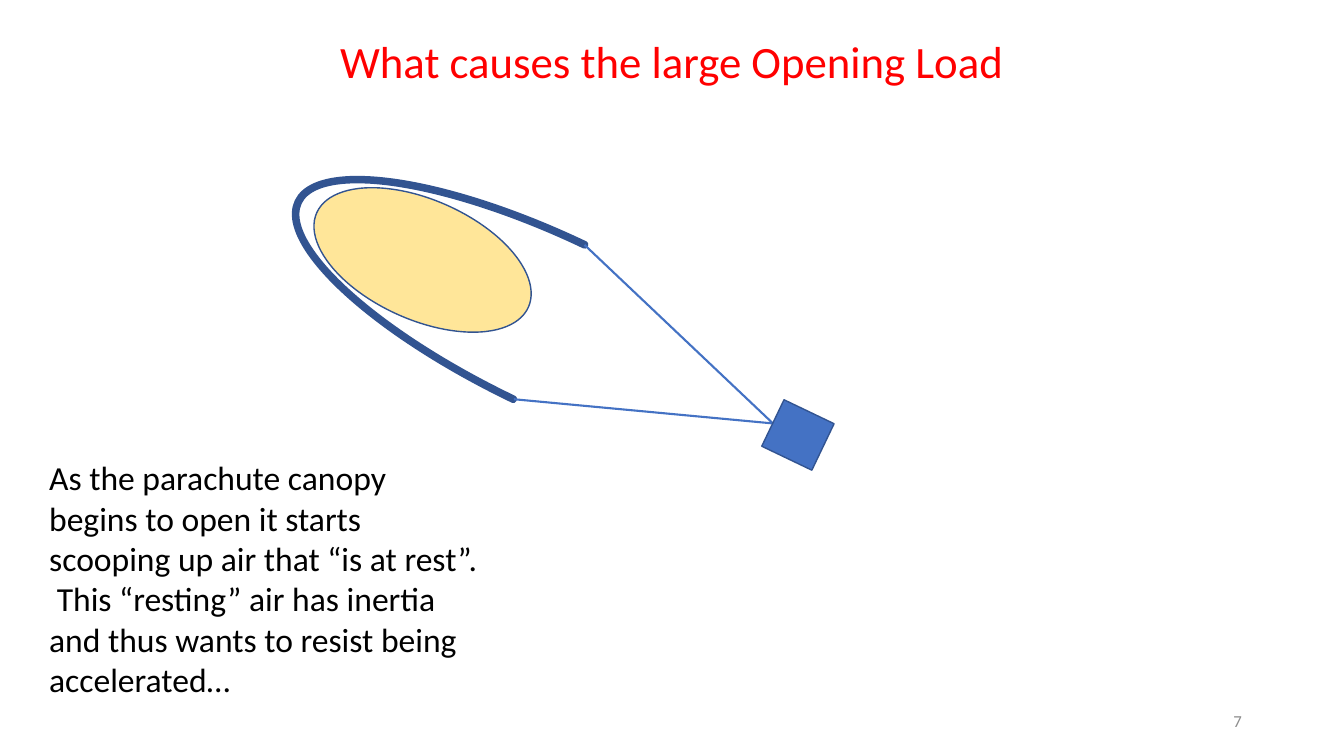
"""Build the slide on what causes a parachute's large opening load."""
from lxml import etree
from pptx import Presentation
from pptx.dml.color import RGBColor
from pptx.enum import shapes, text
from pptx.oxml import ns
from pptx.util import Cm, Pt

COLORS = {
    "blue": "4472C4",
    "outline": "325491",
    "air": "FFE699",
    "title": "FF0000",
    "body": "000000",
    "number": "8C8C8C",
}


def add_part(parent, kind, place, rotation, fill, line_width):
    """Add a rotated, outlined preset shape."""
    part = parent.add_shape(kind, *[Cm(length) for length in place])
    part.shadow.inherit = False
    part.rotation = rotation
    part.fill.solid()
    part.fill.fore_color.rgb = RGBColor.from_string(COLORS[fill])
    part.line.color.rgb = RGBColor.from_string(COLORS["outline"])
    part.line.width = Pt(line_width)
    return part


def write_text(box, place, words, size, color, align, anchor):
    """Place a box and write one formatted run in it."""
    box.left, box.top, box.width, box.height = [Cm(length) for length in place]
    frame = box.text_frame
    frame.word_wrap = True
    frame.auto_size = text.MSO_AUTO_SIZE.NONE
    frame.vertical_anchor = anchor
    para = frame.paragraphs[0]
    para.alignment = align
    span = para.add_run()
    span.text = words
    span.font.name = "Calibri"
    span.font.size = Pt(size)
    span.font.color.rgb = RGBColor.from_string(COLORS[color])


deck = Presentation()
deck.slide_width, deck.slide_height = Cm(33.87), Cm(19.05)
page = deck.slides.add_slide(deck.slide_layouts.get_by_name("Title Only"))

write_text(page.shapes.title, (8.03, 0.71, 17.81, 1.63),
           "What causes the large Opening Load", 32, "title",
           text.PP_ALIGN.CENTER, text.MSO_ANCHOR.TOP)

parachute = page.shapes.add_group_shape().shapes
canopy = add_part(parachute, shapes.MSO_SHAPE.BLOCK_ARC,
                  (11.71, 1.07, 4.32, 14.12), 295.6, "blue", 4.5)
for index, value in enumerate((108, 215.044, 0.008)):
    canopy.adjustments[index] = value

load_corner = (Cm(19.48), Cm(10.67))
for left, top in ((12.95, 10.06), (14.73, 6.17)):
    cord = parachute.add_connector(shapes.MSO_CONNECTOR.STRAIGHT,
                                   Cm(left), Cm(top), *load_corner)
    cord.line.color.rgb = RGBColor.from_string(COLORS["blue"])
    cord.line.width = Pt(1.5)
    etree.SubElement(cord._element.spPr, ns.qn("a:effectLst"))

add_part(parachute, shapes.MSO_SHAPE.RECTANGLE,
         (19.46, 10.26, 1.3, 1.4), 295.6, "blue", 1)
add_part(page.shapes, shapes.MSO_SHAPE.OVAL,
         (9.14, 3.63, 3.02, 5.84), 294, "air", 1)

explanation = (
    "As the parachute canopy begins to open it starts scooping up air "
    "that “is at rest”.  This “resting” air has inertia and thus wants "
    "to resist being accelerated…"
)
write_text(page.shapes.add_textbox(0, 0, 0, 0), (0.99, 11.4, 11.35, 6.4),
           explanation, 24, "body", text.PP_ALIGN.LEFT, text.MSO_ANCHOR.TOP)
write_text(page.shapes.add_textbox(0, 0, 0, 0), (23.93, 17.65, 7.62, 1.02),
           "7", 12, "number", text.PP_ALIGN.RIGHT, text.MSO_ANCHOR.MIDDLE)

deck.save("out.pptx")
